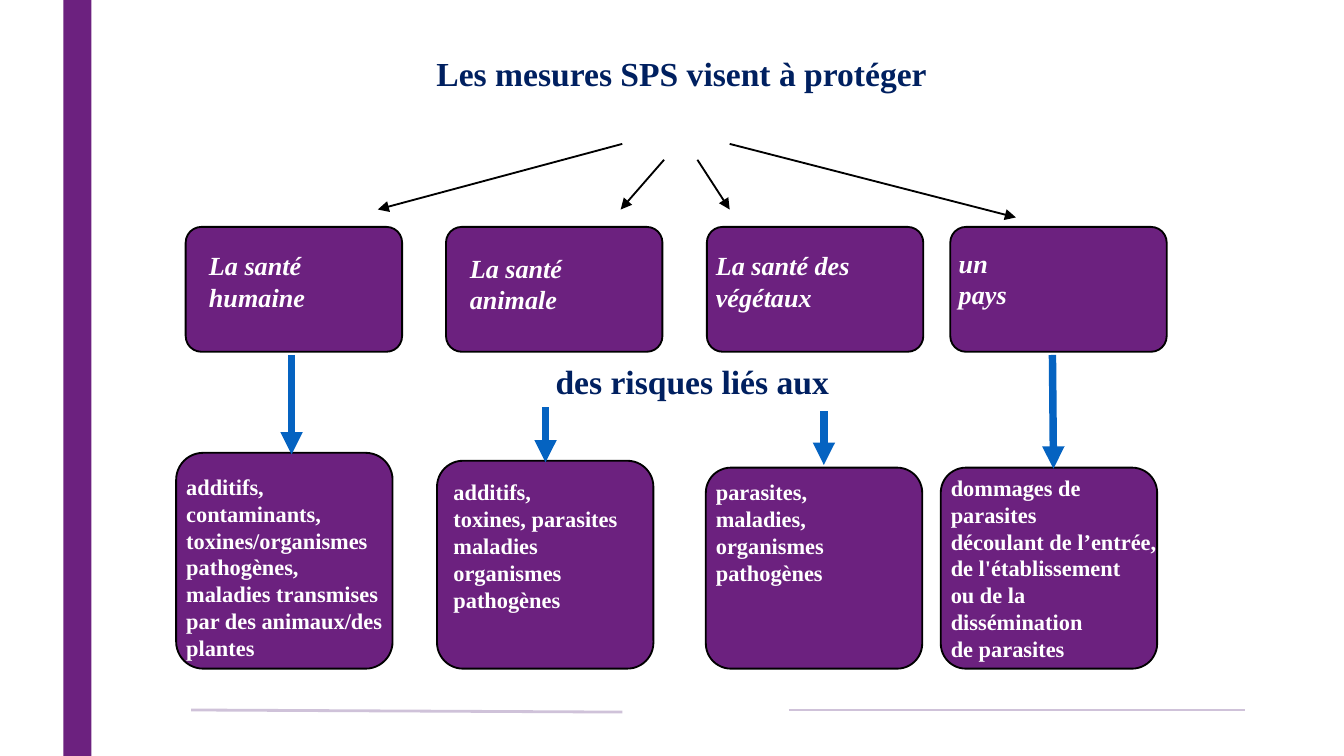
from dataclasses import dataclass

from lxml.etree import SubElement
from pptx import Presentation
from pptx.dml.color import RGBColor
from pptx.enum.shapes import MSO_CONNECTOR as Connector, MSO_SHAPE as Preset
from pptx.enum.text import PP_ALIGN as Align
from pptx.oxml.ns import qn
from pptx.util import Cm, Pt


@dataclass(frozen=True)
class Theme:
    font: str = "Times New Roman"
    purple: RGBColor = RGBColor(0x6C, 0x21, 0x7F)
    lilac: RGBColor = RGBColor(0xCF, 0xC2, 0xD9)
    navy: RGBColor = RGBColor(0x00, 0x20, 0x60)
    blue: RGBColor = RGBColor(0x05, 0x63, 0xC1)
    black: RGBColor = RGBColor(0, 0, 0)
    white: RGBColor = RGBColor(0xFF, 0xFF, 0xFF)
    title_size: int = 18
    target_size: int = 14
    risk_size: int = 12


class SlideBuilder:
    def __init__(self, slide, theme):
        self.slide = slide
        self.theme = theme

    def block(self, preset, left, top, width, height, outlined=True):
        shape = self.slide.shapes.add_shape(
            preset, Cm(left), Cm(top), Cm(width), Cm(height))
        shape.shadow.inherit = False
        shape.fill.solid()
        shape.fill.fore_color.rgb = self.theme.purple
        if outlined:
            shape.line.color.rgb = self.theme.black
            shape.line.width = Pt(1)
        else:
            shape.line.fill.background()
        return shape

    def card(self, left, top, width, height):
        shape = self.block(Preset.ROUNDED_RECTANGLE, left, top, width, height)
        shape.adjustments[0] = 0.125

    def text(self, place, lines, size, color, align=Align.LEFT,
             italic=False, top_inset=0.1):
        box = self.slide.shapes.add_textbox(*map(Cm, place))
        frame = box.text_frame
        frame_format = {
            "word_wrap": True,
            "margin_left": Cm(0.19), "margin_right": Cm(0.19),
            "margin_top": Cm(top_inset), "margin_bottom": Cm(0.1),
        }
        for name, value in frame_format.items():
            setattr(frame, name, value)
        frame.text = "\n".join(lines)
        font_format = {"name": self.theme.font, "size": Pt(size),
                       "bold": True, "italic": italic}
        for paragraph in frame.paragraphs:
            paragraph.alignment = align
            for run in paragraph.runs:
                for name, value in font_format.items():
                    setattr(run.font, name, value)
                run.font.color.rgb = color

    def line(self, ends, color, width, arrow=False):
        """Draw a line through ends (x1, y1, x2, y2), with an optional arrowhead."""
        connector = self.slide.shapes.add_connector(
            Connector.STRAIGHT, *map(Cm, ends))
        connector.line.color.rgb = color
        connector.line.width = Pt(width)
        if arrow:
            SubElement(connector.line._get_or_add_ln(),
                       qn("a:tailEnd"), type="triangle")
        SubElement(connector._element.spPr, qn("a:effectLst"))


CARD_WIDTH = 4.09
TARGET_TOP, TARGET_HEIGHT = 4.29, 2.36
RISK_BOTTOM = 12.64

# Card left, text place, lines
TARGETS = [
    (3.51, (3.76, 4.14, 3.95, 1.91), ["La santé humaine"]),
    (8.43, (8.69, 4.19, 3.38, 1.91), ["La santé animale"]),
    (13.36, (13.34, 4.14, 4.14, 2.49), ["La santé des végétaux"]),
    (17.96, (17.93, 4.09, 4.14, 1.91), ["un", "pays"]),
]

# Card left and top, text place, lines
RISKS = [
    (3.33, 8.56, (3.33, 8.84, 4.42, 3.78),
     ["additifs,", "contaminants,", "toxines/organismes pathogènes,",
      "maladies transmises par des animaux/des plantes"]),
    (8.26, 8.71, (8.38, 8.94, 4.14, 2.74),
     ["additifs,", "toxines, parasites", "maladies", "organismes",
      "pathogènes"]),
    (13.34, 8.84, (13.34, 8.94, 4.06, 2.24),
     ["parasites,", "maladies, organismes", "pathogènes"]),
    (17.78, 8.84, (17.78, 8.86, 4.32, 3.78),
     ["dommages de parasites", "découlant de l’entrée,",
      "de l'établissement", "ou de la dissémination", "de parasites"]),
]

TITLE_ARROWS = [
    (11.76, 2.72, 7.14, 3.96),
    (12.55, 3.02, 11.73, 3.96),
    (13.18, 3.02, 13.79, 3.96),
    (13.79, 2.72, 19.2, 4.11),
]
RISK_ARROWS = [
    (5.51, 6.71, 5.51, 8.59),
    (10.31, 7.7, 10.31, 8.74),
    (15.57, 7.77, 15.57, 8.79),
    (19.89, 6.71, 19.91, 8.86),
]
FOOTER_LINES = [(11.76, 13.46, 3.61, 13.42), (14.91, 13.42, 23.52, 13.42)]


def main():
    presentation = Presentation()
    presentation.slide_width = Cm(25.4)
    presentation.slide_height = Cm(14.29)
    theme = Theme()
    builder = SlideBuilder(
        presentation.slides.add_slide(presentation.slide_layouts[6]), theme)

    builder.block(Preset.RECTANGLE, 1.2, 0, 0.53, 14.29, outlined=False)
    for ends in FOOTER_LINES:
        builder.line(ends, theme.lilac, 1.5)

    builder.text((3.51, 0.91, 18.75, 0.97),
                 ["Les mesures SPS visent à protéger"],
                 theme.title_size, theme.navy, Align.CENTER)
    for left, place, lines in TARGETS:
        builder.card(left, TARGET_TOP, CARD_WIDTH, TARGET_HEIGHT)
        builder.text(place, lines, theme.target_size, theme.white,
                     italic=True, top_inset=0.58)

    builder.text((10.31, 6.73, 15.09, 0.97), ["des risques liés aux"],
                 theme.title_size, theme.navy)
    for left, top, place, lines in RISKS:
        builder.card(left, top, CARD_WIDTH, RISK_BOTTOM - top)
        builder.text(place, lines, theme.risk_size, theme.white)

    for ends in TITLE_ARROWS:
        builder.line(ends, theme.black, 1, arrow=True)
    for ends in RISK_ARROWS:
        builder.line(ends, theme.blue, 4, arrow=True)

    presentation.save("out.pptx")


if __name__ == "__main__":
    main()
